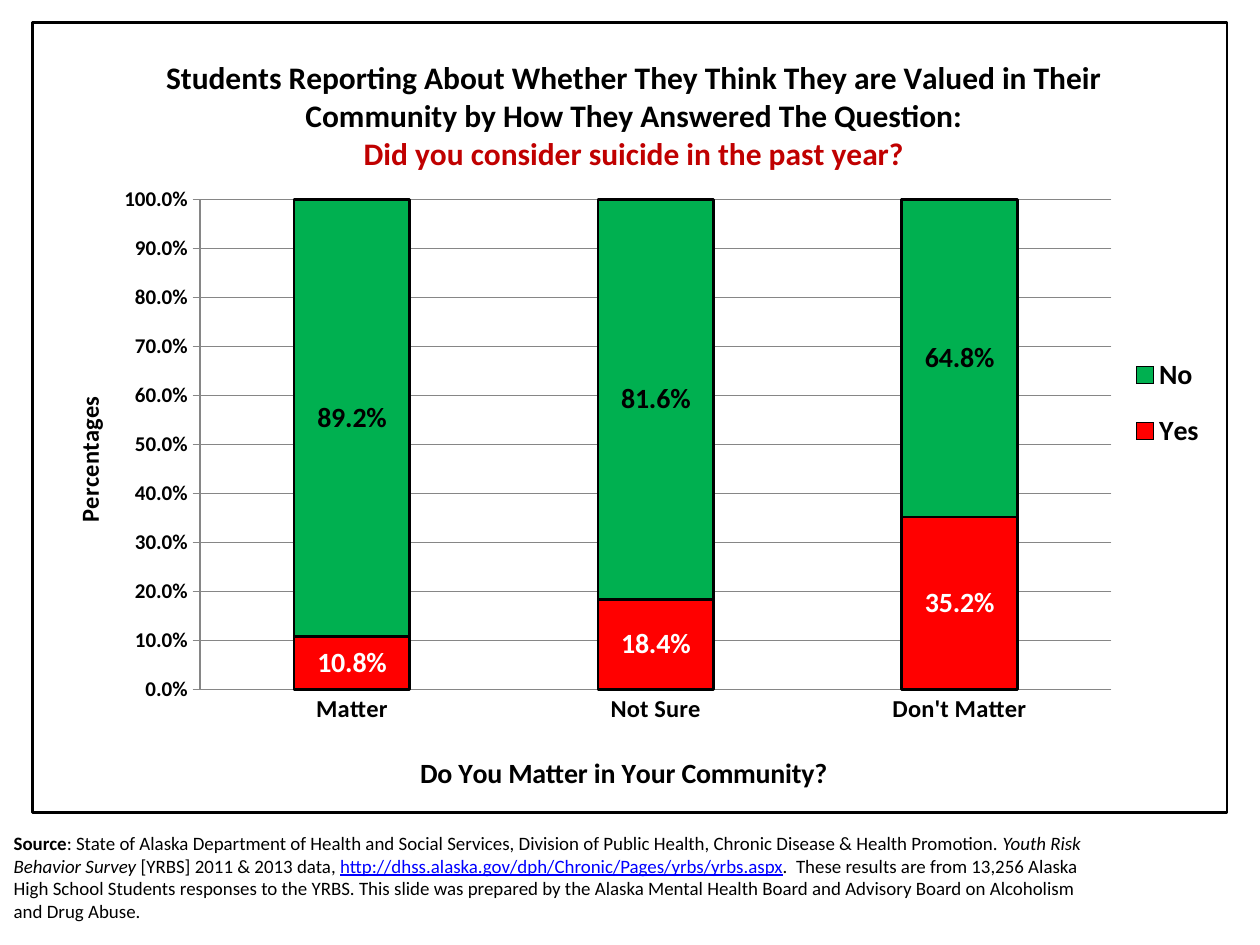
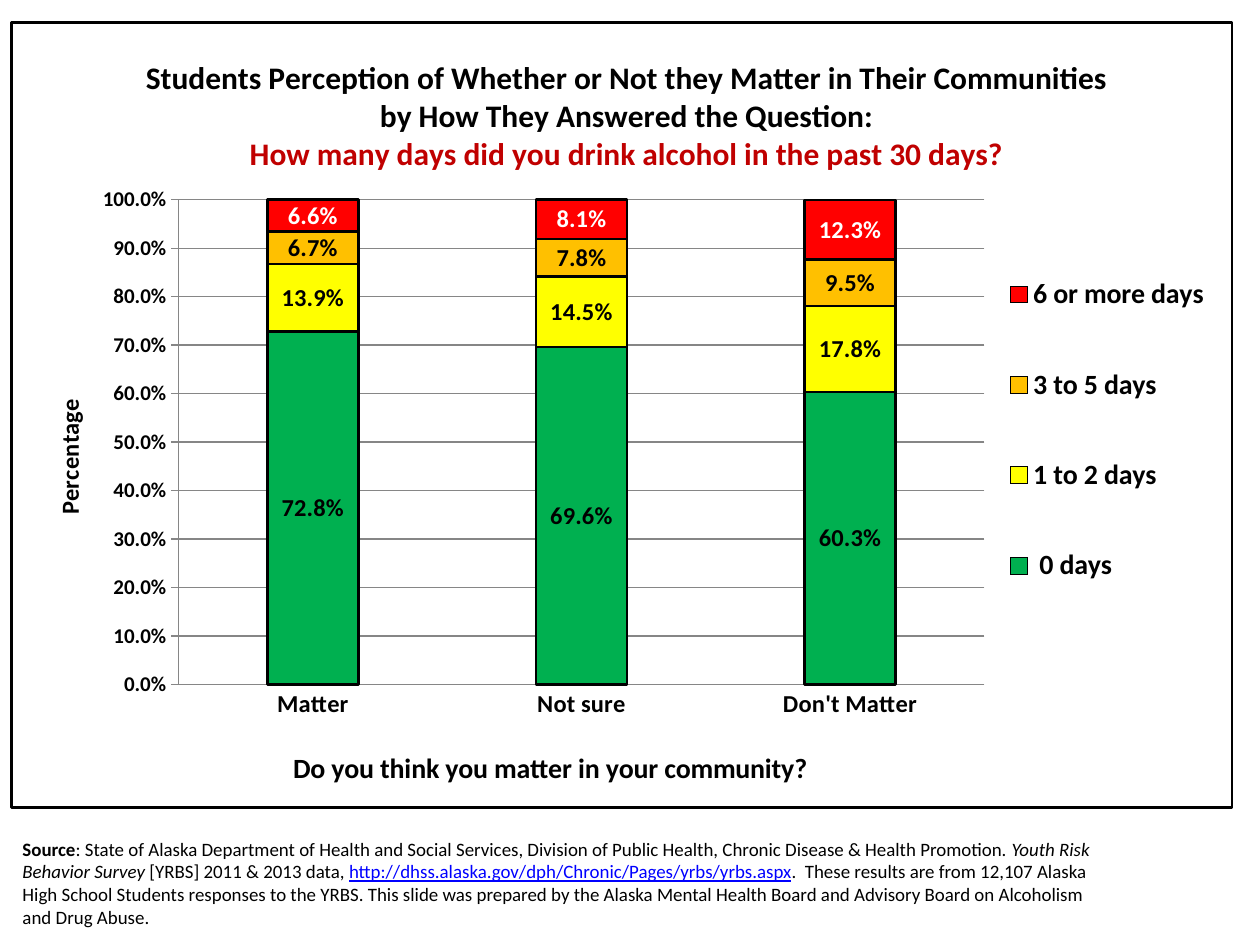
"""Build two slides of stacked survey charts, each with a source note."""
import dataclasses

import lxml.etree
import pptx
import pptx.chart.data
import pptx.dml.color
import pptx.enum.chart
import pptx.enum.text
import pptx.oxml
import pptx.oxml.ns
import pptx.util

Inches, Pt = pptx.util.Inches, pptx.util.Pt

FONT = "Calibri"
BLACK, WHITE, GREY = "000000", "FFFFFF", "868686"
RED, GREEN, YELLOW, AMBER = "FF0000", "00B050", "FFFF00", "FFC000"
QUESTION_RED, LINK_BLUE = "C00000", "0000FF"
PERCENT = "0.0%"
BORDER = Pt(1.5)


@dataclasses.dataclass(frozen=True)
class Box:
    """A rectangle on the slide in inches."""
    left: float
    top: float
    width: float = 0
    height: float = 0

    def lengths(self) -> tuple:
        """Give the four sides as lengths."""
        return tuple(map(Inches, (self.left, self.top, self.width, self.height)))


@dataclasses.dataclass(frozen=True)
class Answer:
    """One stacked answer with its share per category."""
    name: str
    shares: tuple[float, ...]
    fill: str
    label: str = BLACK


@dataclasses.dataclass(frozen=True)
class Survey:
    """Everything that differs between the slides."""
    heading: str
    question: str
    category_title: str
    share_title: str
    categories: tuple[str, ...]
    answers: tuple[Answer, ...]
    students: str
    gap: int
    label_size: int
    frame: Box
    plot: Box
    legend: Box
    heading_at: Box
    category_title_at: Box
    share_title_at: Box
    source: Box


SURVEYS = (
    Survey(
        heading="Students Reporting About Whether They Think They are Valued in Their "
                "Community by How They Answered The Question:",
        question="Did you consider suicide in the past year?",
        category_title="Do You Matter in Your Community?",
        share_title="Percentages",
        categories=("Matter", "Not Sure", "Don't Matter"),
        answers=(
            Answer("Yes", (0.108, 0.184, 0.352), RED, WHITE),
            Answer("No", (0.892, 0.816, 0.648), GREEN),
        ),
        students="13,256",
        gap=163,
        label_size=16,
        frame=Box(0.25, 0.17, 9.5, 6.29),
        plot=Box(1.58, 1.58, 7.25, 3.9),
        legend=Box(8.95, 2.67, 0.65, 1.06),
        heading_at=Box(1.28, 0.41),
        category_title_at=Box(3.29, 5.95),
        share_title_at=Box(0.53, 3.11),
        source=Box(0.01, 6.59, 8.75, 0.74),
    ),
    Survey(
        heading="Students Perception of Whether or Not they Matter in Their Communities "
                "by How They Answered the Question:",
        question="How many days did you drink alcohol in the past 30 days?",
        category_title="Do you think you matter in your community?",
        share_title="Percentage",
        categories=("Matter", "Not sure", "Don't Matter"),
        answers=(
            Answer(" 0 days", (0.728, 0.696, 0.603), GREEN),
            Answer("1 to 2 days", (0.139, 0.145, 0.178), YELLOW),
            Answer("3 to 5 days", (0.067, 0.078, 0.095), AMBER),
            Answer("6 or more days", (0.066, 0.081, 0.123), RED, WHITE),
        ),
        students="12,107",
        gap=196,
        label_size=14,
        frame=Box(0.08, 0.17, 9.71, 6.25),
        plot=Box(1.41, 1.58, 6.41, 3.86),
        legend=Box(7.92, 1.75, 1.75, 3.33),
        heading_at=Box(1.12, 0.41),
        category_title_at=Box(2.28, 5.91),
        share_title_at=Box(0.37, 3.13),
        source=Box(0.08, 6.67, 8.75, 0.67),
    ),
)


def color(hex_value: str) -> pptx.dml.color.RGBColor:
    """Turn a hex string into a colour."""
    return pptx.dml.color.RGBColor.from_string(hex_value)


def style(font, size: float, hex_value: str = BLACK, bold: bool = True) -> None:
    """Set typeface, size, colour and weight."""
    font.name, font.size, font.bold = FONT, Pt(size), bold
    font.color.rgb = color(hex_value)


def draw_line(line, hex_value: str, width: int) -> None:
    """Set the colour and width of a line."""
    line.color.rgb = color(hex_value)
    line.width = width


def place(part, index: int, area: Box, frame: Box, inner: bool = False) -> None:
    """Give a chart part a fixed position as fractions of the chart frame."""
    qn = pptx.oxml.ns.qn
    for automatic in part.findall(qn("c:layout")):
        part.remove(automatic)
    layout = pptx.oxml.parse_xml(f"<c:layout {pptx.oxml.ns.nsdecls('c')}><c:manualLayout/></c:layout>")
    settings = [("layoutTarget", "inner")] if inner else []
    settings += [("xMode", "edge"), ("yMode", "edge"),
                 ("x", (area.left - frame.left) / frame.width),
                 ("y", (area.top - frame.top) / frame.height)]
    if area.width:
        settings += [("w", area.width / frame.width), ("h", area.height / frame.height)]
    for tag, value in settings:
        lxml.etree.SubElement(layout[0], qn(f"c:{tag}")).set("val", str(value))
    part.insert(index, layout)


def add_border(chart) -> None:
    """Fill the chart area white and outline it in black."""
    area = pptx.oxml.parse_xml(
        f'<c:spPr {pptx.oxml.ns.nsdecls("c", "a")}>'
        f'<a:solidFill><a:srgbClr val="{WHITE}"/></a:solidFill>'
        f'<a:ln w="{BORDER}"><a:solidFill><a:srgbClr val="{BLACK}"/></a:solidFill></a:ln></c:spPr>')
    chart.element.find(pptx.oxml.ns.qn("c:chart")).addnext(area)


def write_title(title, lines: list[tuple[str, str]], size: int, at: Box, frame: Box) -> None:
    """Write a chart or axis title, one coloured paragraph per line."""
    text = title.text_frame
    text.text = "\n".join(line for line, _ in lines)
    for paragraph, (_, hex_value) in zip(text.paragraphs, lines):
        style(paragraph.font, size, hex_value)
    place(title._element, 1, at, frame)


def style_axes(chart, survey: Survey) -> None:
    """Format both axes and the gridlines."""
    tick_mark = pptx.enum.chart.XL_TICK_MARK
    shares, categories = chart.value_axis, chart.category_axis
    shares.minimum_scale, shares.maximum_scale, shares.major_unit = 0, 1, 0.1
    shares.tick_labels.number_format = PERCENT
    shares.tick_labels.number_format_is_linked = False
    shares.major_tick_mark = tick_mark.OUTSIDE
    categories.major_tick_mark = tick_mark.NONE
    draw_line(shares.major_gridlines.format.line, GREY, Pt(0.75))
    for axis, size, title, title_size, at in (
            (shares, 12, survey.share_title, 14, survey.share_title_at),
            (categories, 14, survey.category_title, 16, survey.category_title_at)):
        style(axis.tick_labels.font, size)
        draw_line(axis.format.line, GREY, Pt(0.75))
        write_title(axis.axis_title, [(title, BLACK)], title_size, at, survey.frame)


def style_answers(plot, survey: Survey) -> None:
    """Colour and label each stacked answer."""
    plot.gap_width, plot.overlap, plot.vary_by_categories = survey.gap, 100, False
    for series, answer in zip(plot.series, survey.answers):
        series.invert_if_negative = False
        series.format.fill.solid()
        series.format.fill.fore_color.rgb = color(answer.fill)
        draw_line(series.format.line, BLACK, BORDER)
        labels = series.data_labels
        labels.show_value = True
        labels.number_format, labels.number_format_is_linked = PERCENT, False
        labels.position = pptx.enum.chart.XL_LABEL_POSITION.CENTER
        style(labels.font, survey.label_size, answer.label)


def add_survey_chart(slide, survey: Survey) -> None:
    """Add the stacked chart with its titles and legend."""
    data = pptx.chart.data.CategoryChartData(number_format=PERCENT)
    data.categories = survey.categories
    for answer in survey.answers:
        data.add_series(answer.name, answer.shares)
    chart = slide.shapes.add_chart(
        pptx.enum.chart.XL_CHART_TYPE.COLUMN_STACKED, *survey.frame.lengths(), data).chart
    style(chart.font, 10, bold=False)
    add_border(chart)
    chart.has_title = True
    write_title(chart.chart_title, [(survey.heading, BLACK), (survey.question, QUESTION_RED)],
                18, survey.heading_at, survey.frame)
    style_axes(chart, survey)
    style_answers(chart.plots[0], survey)
    chart.has_legend = True
    legend = chart.legend
    legend.position = pptx.enum.chart.XL_LEGEND_POSITION.RIGHT
    legend.include_in_layout = False
    style(legend.font, 16)
    place(legend._element, 1, survey.legend, survey.frame)
    plot_area = chart.element.find(".//" + pptx.oxml.ns.qn("c:plotArea"))
    place(plot_area, 0, survey.plot, survey.frame, inner=True)


def add_source(slide, survey: Survey) -> None:
    """Add the source note below the chart."""
    note = slide.shapes.add_textbox(*survey.source.lengths()).text_frame
    note.word_wrap = True
    note.vertical_anchor = pptx.enum.text.MSO_ANCHOR.MIDDLE
    paragraph = note.paragraphs[0]
    style(paragraph.font, 10.8, bold=False)
    source, _, study, _, address, _ = runs = [paragraph.add_run() for _ in range(6)]
    for run, text in zip(runs, (
            "Source",
            ": State of Alaska Department of Health and Social Services, Division of Public "
            "Health, Chronic Disease & Health Promotion. ",
            "Youth Risk Behavior Survey",
            " [YRBS] 2011 & 2013 data, ",
            "http://dhss.alaska.gov/dph/Chronic/Pages/yrbs/yrbs.aspx",
            f".  These results are from {survey.students} Alaska High School Students responses "
            "to the YRBS. This slide was prepared by the Alaska Mental Health Board and "
            "Advisory Board on Alcoholism and Drug Abuse.")):
        run.text = text
        style(run.font, 10.8, bold=run is source)
    study.font.italic = True
    address.font.underline = True
    address.font.color.rgb = color(LINK_BLUE)


def main() -> None:
    """Build and save the presentation."""
    deck = pptx.Presentation()
    deck.slide_width, deck.slide_height = Inches(10), Inches(7.5)
    for survey in SURVEYS:
        slide = deck.slides.add_slide(deck.slide_layouts[6])
        add_source(slide, survey)
        add_survey_chart(slide, survey)
    deck.save("out.pptx")


if __name__ == "__main__":
    main()
